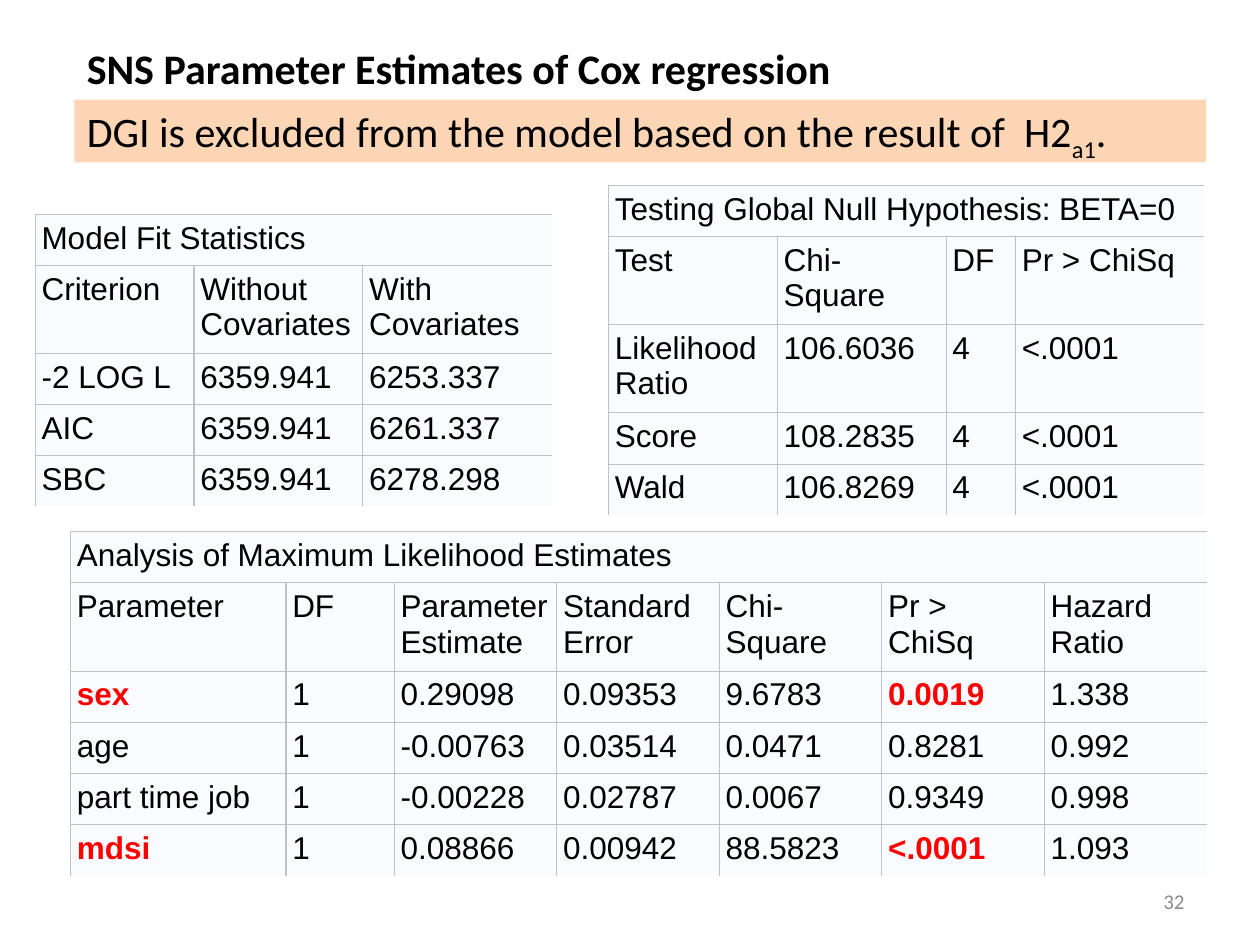
from lxml.etree import SubElement
from pptx import Presentation
from pptx.dml.color import RGBColor
from pptx.enum.shapes import MSO_SHAPE
from pptx.enum.text import MSO_ANCHOR, PP_ALIGN
from pptx.oxml.ns import qn
from pptx.util import Inches, Pt

BLACK = RGBColor(0x00, 0x00, 0x00)
RED = RGBColor(0xFF, 0x00, 0x00)
GRAY = RGBColor(0x8C, 0x8C, 0x8C)
PEACH = RGBColor(0xFC, 0xD5, 0xB5)
CELL_FILL = RGBColor(0xFA, 0xFB, 0xFE)
BORDER = RGBColor(0xC1, 0xC1, 0xC1)

FIT_ROWS = [
    ["Criterion", "Without\nCovariates", "With\nCovariates"],
    ["-2 LOG L", "6359.941", "6253.337"],
    ["AIC", "6359.941", "6261.337"],
    ["SBC", "6359.941", "6278.298"],
]
TEST_ROWS = [
    ["Test", "Chi-Square", "DF", "Pr > ChiSq"],
    ["Likelihood Ratio", "106.6036", "4", "<.0001"],
    ["Score", "108.2835", "4", "<.0001"],
    ["Wald", "106.8269", "4", "<.0001"],
]
ESTIMATE_ROWS = [
    ["Parameter", "DF", "Parameter\nEstimate", "Standard\nError",
     "Chi-Square", "Pr > ChiSq", "Hazard\nRatio"],
    ["sex", "1", "0.29098", "0.09353", "9.6783", "0.0019", "1.338"],
    ["age", "1", "-0.00763", "0.03514", "0.0471", "0.8281", "0.992"],
    ["part time job", "1", "-0.00228", "0.02787", "0.0067", "0.9349", "0.998"],
    ["mdsi", "1", "0.08866", "0.00942", "88.5823", "<.0001", "1.093"],
]
SIGNIFICANT_CELLS = {(2, 0), (2, 5), (5, 0), (5, 5)}


def write(paragraph, text, font="Calibri", size=24, color=BLACK, bold=False, baseline=None):
    for index, line in enumerate(text.split("\n")):
        if index:
            paragraph.add_line_break()
        run = paragraph.add_run()
        run.text = line
        run.font.name = font
        run.font.size = Pt(size)
        run.font.color.rgb = color
        run.font.bold = bold
        if baseline is not None:
            run.font._element.set("baseline", str(baseline))


class SlideBuilder:
    cell_margin = Inches(0.05)
    border_width = Pt(0.75)
    tall_row = 0.7

    def __init__(self, slide):
        self.slide = slide

    def text_box(self, left, top, width, height, text, align=PP_ALIGN.LEFT,
                 anchor=MSO_ANCHOR.TOP, **text_format):
        box = self.slide.shapes.add_textbox(
            Inches(left), Inches(top), Inches(width), Inches(height))
        box.text_frame.word_wrap = True
        box.text_frame.vertical_anchor = anchor
        paragraph = box.text_frame.paragraphs[0]
        paragraph.alignment = align
        write(paragraph, text, **text_format)

    def banner(self, left, top, width, height, parts):
        """Add a filled bar whose text is a list of (text, format) parts."""
        shape = self.slide.shapes.add_shape(
            MSO_SHAPE.RECTANGLE, Inches(left), Inches(top), Inches(width), Inches(height))
        shape.shadow.inherit = False
        shape.fill.solid()
        shape.fill.fore_color.rgb = PEACH
        shape.line.fill.background()
        shape.text_frame.word_wrap = True
        shape.text_frame.vertical_anchor = MSO_ANCHOR.TOP
        paragraph = shape.text_frame.paragraphs[0]
        paragraph.alignment = PP_ALIGN.LEFT
        for text, text_format in parts:
            write(paragraph, text, **text_format)

    def borders(self, cell, visible):
        """Draw the sides named in visible (of L, R, T, B) and clear the others."""
        properties = cell._tc.get_or_add_tcPr()
        for side in "LRTB":
            line = SubElement(properties, qn(f"a:ln{side}"), w=str(self.border_width))
            if side in visible:
                fill = SubElement(line, qn("a:solidFill"))
                SubElement(fill, qn("a:srgbClr"), val=str(BORDER))
            else:
                SubElement(line, qn("a:noFill"))

    def table(self, left, top, height, widths, title, rows, tall_rows, highlights=()):
        """Add a table with a merged title row; the short rows share the height left over."""
        row_count, column_count = len(rows) + 1, len(widths)
        table = self.slide.shapes.add_table(
            row_count, column_count, Inches(left), Inches(top),
            Inches(sum(widths)), Inches(height)).table
        table.first_row = table.horz_banding = False
        for column, width in zip(table.columns, widths):
            column.width = Inches(width)
        short_row = (height - self.tall_row * len(tall_rows)) / (row_count - len(tall_rows))
        table.cell(0, 0).merge(table.cell(0, column_count - 1))
        title_row = [title] + [""] * (column_count - 1)
        for r, values in enumerate([title_row] + rows):
            table.rows[r].height = Inches(self.tall_row if r in tall_rows else short_row)
            for c, value in enumerate(values):
                cell = table.cell(r, c)
                cell.margin_left = cell.margin_right = self.cell_margin
                cell.margin_top = cell.margin_bottom = self.cell_margin
                visible = "T"
                if c == 0 or r > 0:
                    visible += "L"
                if r > 0 and c < column_count - 1:
                    visible += "R"
                if r < row_count - 1:
                    visible += "B"
                self.borders(cell, visible)
                cell.fill.solid()
                cell.fill.fore_color.rgb = CELL_FILL
                if value:
                    marked = (r, c) in highlights
                    write(cell.text_frame.paragraphs[0], value, font="Arial", size=18,
                          color=RED if marked else BLACK, bold=marked)


def main():
    presentation = Presentation()
    presentation.slide_width = Inches(10)
    presentation.slide_height = Inches(7.5)
    builder = SlideBuilder(presentation.slides.add_slide(presentation.slide_layouts[6]))

    builder.text_box(7.17, 6.95, 2.33, 0.4, "32", align=PP_ALIGN.RIGHT,
                     anchor=MSO_ANCHOR.MIDDLE, size=12, color=GRAY)
    builder.text_box(0.59, 0.29, 8.98, 0.5,
                     "SNS Parameter Estimates of Cox regression", bold=True)
    builder.table(0.56, 4.22, 2.73, [1.71, 0.86] + [1.29] * 5,
                  "Analysis of Maximum Likelihood Estimates", ESTIMATE_ROWS,
                  tall_rows=[1], highlights=SIGNIFICANT_CELLS)
    builder.table(0.28, 1.7, 2.32, [1.26, 1.34, 1.5],
                  "Model Fit Statistics", FIT_ROWS, tall_rows=[1])
    builder.table(4.83, 1.47, 2.62, [1.34, 1.34, 0.55, 1.5],
                  "Testing Global Null Hypothesis: BETA=0", TEST_ROWS, tall_rows=[1, 2])
    builder.banner(0.59, 0.79, 8.98, 0.5, [
        ("DGI is excluded from the model based on the result of  H2", {}),
        ("a1", {"baseline": -25000}),
        (".", {}),
    ])
    presentation.save("out.pptx")


if __name__ == "__main__":
    main()
